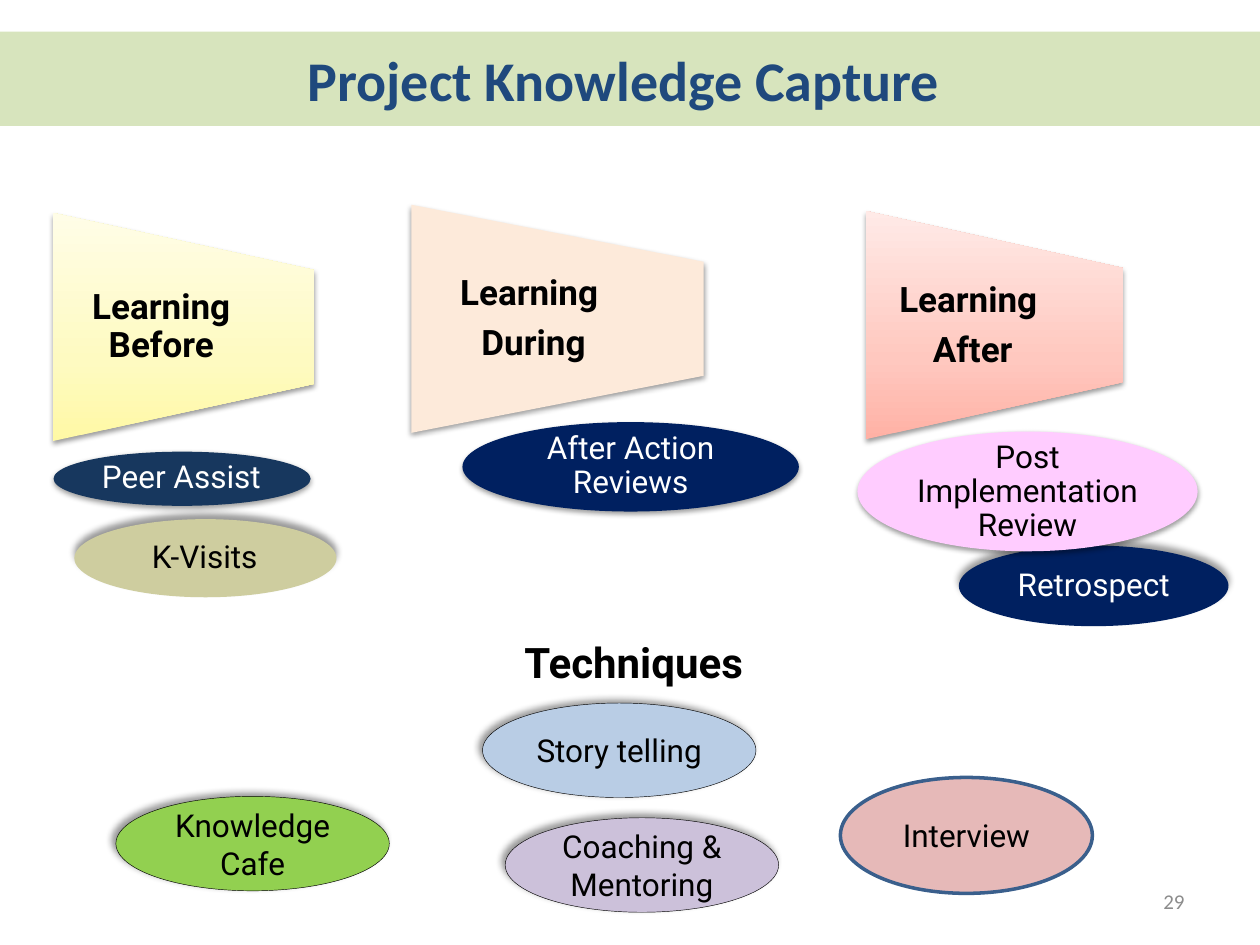
"""Build the Project Knowledge Capture slide."""
from pptx import Presentation
from pptx.dml.color import RGBColor
from pptx.enum.shapes import MSO_SHAPE as Shape
from pptx.enum.text import MSO_ANCHOR as Anchor, MSO_AUTO_SIZE as AutoSize, PP_ALIGN as Align
from pptx.oxml import parse_xml
from pptx.oxml.ns import nsdecls
from pptx.util import Inches, Pt

BLACK = RGBColor(0x00, 0x00, 0x00)
WHITE = RGBColor(0xFF, 0xFF, 0xFF)
GREY = RGBColor(0x8C, 0x8C, 0x8C)
TITLE_BLUE = RGBColor(0x1F, 0x49, 0x7D)
TITLE_GREEN = RGBColor(0xD7, 0xE4, 0xBD)
NAVY = RGBColor(0x00, 0x20, 0x60)
STEEL = RGBColor(0x17, 0x37, 0x5E)
KHAKI = RGBColor(0xCE, 0xCD, 0x9F)
PEACH = RGBColor(0xFD, 0xEA, 0xDA)
PINK = RGBColor(0xFF, 0xCC, 0xFF)
LIME = RGBColor(0x92, 0xD0, 0x50)
LILAC = RGBColor(0xCC, 0xC1, 0xDA)
SKY = RGBColor(0xB9, 0xCD, 0xE5)
ROSE = RGBColor(0xE6, 0xB9, 0xB8)
ROSE_EDGE = RGBColor(0x3A, 0x5F, 0x8C)
RED_BLEND = [(0, RGBColor(0xFF, 0xB1, 0xA5)), (35, RGBColor(0xFF, 0xC8, 0xBF)),
             (100, RGBColor(0xFF, 0xEA, 0xE7))]
YELLOW_BLEND = [(0, RGBColor(0xFF, 0xF9, 0xA5)), (35, RGBColor(0xFE, 0xFA, 0xC1)),
                (100, RGBColor(0xFF, 0xFD, 0xE7))]

BELOW = (38, 3.1, 1.6, 90)
ABOVE = (40, 4, 3, 270)
CORNER = (40, 4, 3, 225)
STAGE = dict(kind=Shape.TRAPEZOID, size=20, bold=True, inset=0)
METHOD = dict(kind=Shape.OVAL, size=18, bold=False, inset=0.07)
SNUG_METHOD = {**METHOD, "inset": 0}

TURNED = [
    (METHOD, ["K-Visits"], (1.32, 3.39, 0.62, 2.08), (0.89, 4.21, 1.47, 0.44), KHAKI, BLACK, ABOVE),
    (STAGE, ["Learning ", "After"], (6.99, 1.56, 1.81, 2.04), (6.87, 1.98, 1.7, 1.21),
     RED_BLEND, BLACK, BELOW),
    (METHOD, ["Retrospect"], (8.36, 3.58, 0.64, 2.14), (7.92, 4.43, 1.52, 0.45), NAVY, WHITE, ABOVE),
    (STAGE, ["Learning ", "During"], (3.52, 1.37, 1.81, 2.32), (3.27, 1.93, 1.93, 1.21),
     PEACH, BLACK, BELOW),
    (METHOD, ["Peer Assist"], (1.23, 2.78, 0.43, 2.04), (0.72, 3.65, 1.44, 0.3), STEEL, WHITE, BELOW),
    (STAGE, ["Learning Before"], (0.55, 1.56, 1.81, 2.07), (0.42, 1.99, 1.72, 1.21),
     YELLOW_BLEND, BLACK, BELOW),
    (METHOD, ["Post Implementation Review"], (7.68, 2.55, 0.95, 2.7), (7.2, 3.57, 1.91, 0.67),
     PINK, BLACK, BELOW),
    (SNUG_METHOD, ["After Action Reviews"], (4.65, 2.37, 0.71, 2.67), (4.06, 3.45, 1.89, 0.5),
     NAVY, WHITE, BELOW),
]
TECHNIQUES = [
    ("Knowledge Cafe", (0.92, 6.32, 2.17, 0.75), LIME, BLACK, 0.25, CORNER),
    ("Coaching & Mentoring", (4.01, 6.49, 2.17, 0.75), LILAC, BLACK, 0.25, CORNER),
    ("Interview", (6.67, 6.17, 2, 0.92), ROSE, ROSE_EDGE, 2, None),
    ("Story telling", (3.83, 5.58, 2.17, 0.75), SKY, BLACK, 0.25, CORNER),
]


def frame(place):
    return [Inches(value) for value in place]


def write(box, lines, size, color, bold=False, font="Roboto", align=Align.CENTER, anchor=Anchor.MIDDLE):
    text = box.text_frame
    text.word_wrap = True
    text.vertical_anchor = anchor
    text.text = "\n".join(lines)
    for para in text.paragraphs:
        para.alignment = align
        for span in para.runs:
            span.font.name, span.font.size, span.font.bold = font, Pt(size), bold
            span.font.color.rgb = color
    return text


def paint(shape, fill):
    if isinstance(fill, RGBColor):
        shape.fill.solid()
        shape.fill.fore_color.rgb = fill
        return
    stops = "".join(f'<a:gs pos="{place * 1000}"><a:srgbClr val="{color}"/></a:gs>'
                    for place, color in fill)
    shape._element.spPr.prstGeom.addnext(parse_xml(
        f'<a:gradFill {nsdecls("a")} rotWithShape="0"><a:gsLst>{stops}</a:gsLst>'
        f'<a:lin ang="{270 * 60000}" scaled="0"/></a:gradFill>'))


def cast_shadow(shape, shadow):
    shape.shadow.inherit = False
    if shadow:
        alpha, blur, distance, angle = shadow
        effects = shape._element.spPr.find("{*}effectLst")
        effects.append(parse_xml(
            f'<a:outerShdw {nsdecls("a")} blurRad="{Pt(blur)}" dist="{Pt(distance)}" '
            f'dir="{angle * 60000}" rotWithShape="0"><a:srgbClr val="{BLACK}">'
            f'<a:alpha val="{alpha * 1000}"/></a:srgbClr></a:outerShdw>'))


def add_turned(page, style, lines, place, text_place, fill, color, shadow):
    group = page.shapes.add_group_shape()
    shape = group.shapes.add_shape(style["kind"], *frame(place))
    shape.rotation = 90
    paint(shape, fill)
    shape.line.fill.background()
    cast_shadow(shape, shadow)
    label = group.shapes.add_textbox(*frame(text_place))
    text = write(label, lines, style["size"], color, style["bold"])
    inset = Inches(style["inset"])
    text.margin_left = text.margin_right = text.margin_top = text.margin_bottom = inset
    for para in text.paragraphs:
        para.line_spacing = 0.9
        para.space_after = Pt(style["size"] * 0.35)


def add_technique(page, name, place, fill, edge, width, shadow):
    oval = page.shapes.add_shape(Shape.OVAL, *frame(place))
    paint(oval, fill)
    oval.line.color.rgb = edge
    oval.line.width = Pt(width)
    cast_shadow(oval, shadow)
    write(oval, [name], 18, BLACK)


def main():
    deck = Presentation()
    deck.slide_width, deck.slide_height = Inches(10), Inches(7.5)
    page = deck.slides.add_slide(deck.slide_layouts[5])

    title = page.shapes.title
    title.left, title.top, title.width, title.height = frame((0, 0.25, 10, 0.75))
    paint(title, TITLE_GREEN)
    write(title, ["Project Knowledge Capture "], 32, TITLE_BLUE, True, "Calibri")

    for item in TURNED:
        add_turned(page, *item)
    for item in TECHNIQUES:
        add_technique(page, *item)

    heading = page.shapes.add_textbox(*frame((3.96, 5, 2.14, 0.5)))
    write(heading, ["Techniques"], 24, BLACK, True, anchor=Anchor.TOP).auto_size = AutoSize.SHAPE_TO_FIT_TEXT
    number = page.shapes.add_textbox(*frame((7.17, 6.95, 2.33, 0.4)))
    write(number, ["29"], 12, GREY, font="Calibri", align=Align.RIGHT)

    deck.save("out.pptx")


if __name__ == "__main__":
    main()
